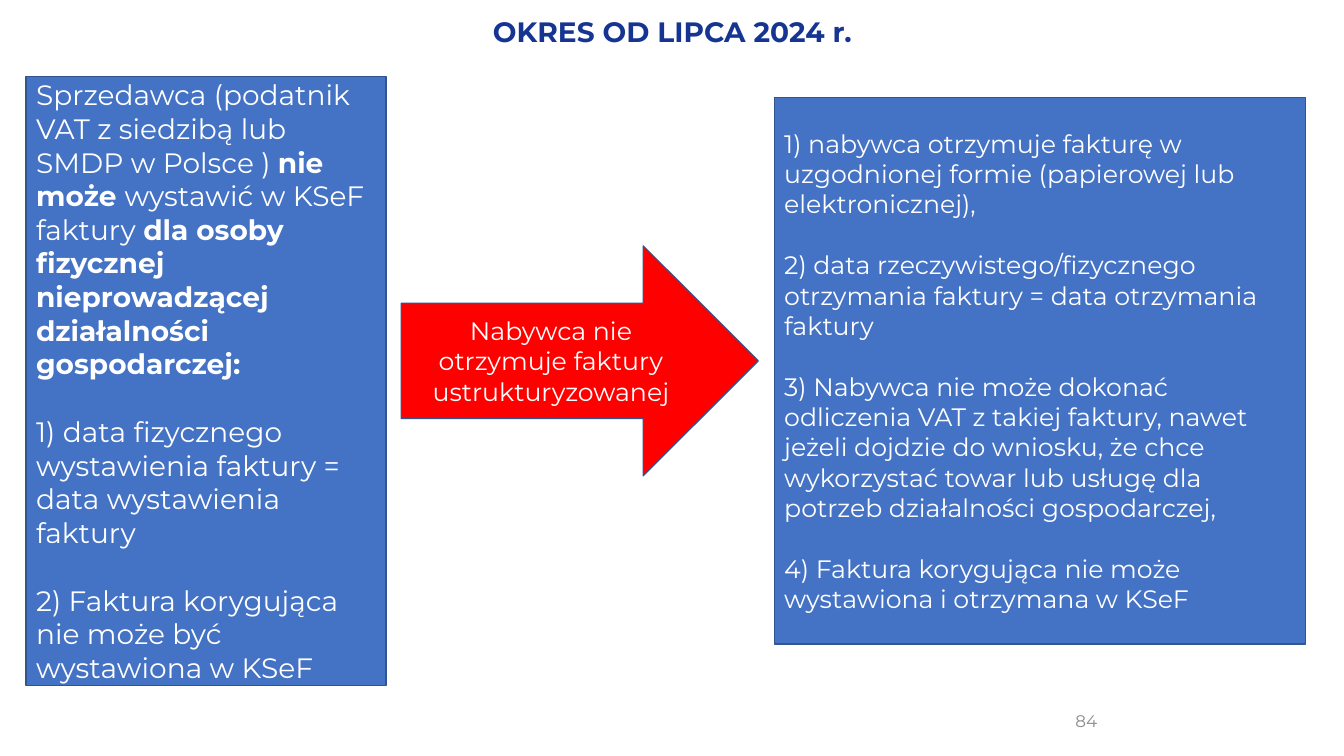
from dataclasses import dataclass

import pptx
import pptx.dml.color
import pptx.enum.shapes
import pptx.enum.text
import pptx.util

Inches = pptx.util.Inches
Shape = pptx.enum.shapes.MSO_SHAPE
Align = pptx.enum.text.PP_ALIGN
Anchor = pptx.enum.text.MSO_ANCHOR

FONT = "Montserrat"
LINE_HEIGHT = 1.22  # of the text size; one empty line between paragraphs
COLOURS = {
    "box": "4472C4",
    "arrow": "FF0000",
    "outline": "325491",
    "light": "FFFFFF",
    "title": "163593",
    "number": "8C8C8C",
}


@dataclass(frozen=True)
class Run:
    text: str
    bold: bool = False


@dataclass(frozen=True)
class Style:
    size: int
    colour: str
    align: Align = Align.LEFT


@dataclass(frozen=True)
class Block:
    kind: Shape
    place: tuple[float, float, float, float]
    fill: str
    style: Style
    paragraphs: list[list[Run]]


SELLER = Block(
    Shape.RECTANGLE, (0.26, 0.76, 3.57, 6.04), "box", Style(20, "light"),
    [
        [
            Run("Sprzedawca (podatnik VAT z siedzibą lub SMDP w Polsce ) "),
            Run("nie może ", bold=True),
            Run("wystawić w KSeF faktury "),
            Run("dla osoby fizycznej nieprowadzącej działalności gospodarczej:", bold=True),
        ],
        [Run("1) data fizycznego wystawienia faktury = data wystawienia faktury")],
        [Run("2) Faktura korygująca nie może być wystawiona w KSeF")],
    ],
)
ARROW = Block(
    Shape.RIGHT_ARROW, (3.98, 2.44, 3.54, 2.28), "arrow", Style(18, "light", Align.CENTER),
    [[Run("Nabywca nie otrzymuje faktury ustrukturyzowanej")]],
)
BUYER = Block(
    Shape.RECTANGLE, (7.68, 0.97, 5.27, 5.42), "box", Style(18, "light"),
    [
        [Run("1) nabywca otrzymuje fakturę w uzgodnionej formie (papierowej lub elektronicznej),")],
        [Run("2) data rzeczywistego/fizycznego otrzymania faktury = data otrzymania faktury")],
        [Run("3) Nabywca nie może dokonać odliczenia VAT z takiej faktury, nawet jeżeli "
             "dojdzie do wniosku, że chce wykorzystać towar lub usługę dla potrzeb "
             "działalności gospodarczej,")],
        [Run("4) Faktura korygująca nie może wystawiona i otrzymana w KSeF")],
    ],
)


def colour(name: str) -> pptx.dml.color.RGBColor:
    return pptx.dml.color.RGBColor.from_string(COLOURS[name])


def write(frame, paragraphs: list[list[Run]], style: Style, wrap: bool = True) -> None:
    """Fill a text frame with paragraphs, run by run."""
    frame.word_wrap = wrap
    frame.auto_size = pptx.enum.text.MSO_AUTO_SIZE.NONE
    frame.vertical_anchor = Anchor.MIDDLE
    for index, runs in enumerate(paragraphs):
        para = frame.add_paragraph() if index else frame.paragraphs[0]
        para.alignment = style.align
        para.space_before = pptx.util.Pt(style.size * LINE_HEIGHT if index else 0)
        for run in runs:
            span = para.add_run()
            span.text = run.text
            span.font.name = FONT
            span.font.size = pptx.util.Pt(style.size)
            span.font.bold = run.bold
            span.font.color.rgb = colour(style.colour)


def draw_block(page, block: Block) -> None:
    """Draw a filled, outlined shape with its text."""
    box = page.shapes.add_shape(block.kind, *map(Inches, block.place))
    box.shadow.inherit = False
    box.fill.solid()
    box.fill.fore_color.rgb = colour(block.fill)
    box.line.color.rgb = colour("outline")
    box.line.width = pptx.util.Pt(1)
    write(box.text_frame, block.paragraphs, block.style)


def main() -> None:
    deck = pptx.Presentation()
    deck.slide_width, deck.slide_height = Inches(13.33), Inches(7.5)
    page = deck.slides.add_slide(deck.slide_layouts.get_by_name("Title Only"))

    # Title
    title = page.shapes.title
    title.left, title.top, title.width, title.height = map(Inches, (4.77, 0.09, 3.8, 0.44))
    write(title.text_frame, [[Run("OKRES OD LIPCA 2024 r.", bold=True)]],
          Style(20, "title", Align.CENTER), wrap=False)

    # Seller, arrow and buyer
    for block in (SELLER, ARROW, BUYER):
        draw_block(page, block)

    # Page number
    number = page.shapes.add_textbox(*map(Inches, (8.73, 6.95, 2.25, 0.4)))
    write(number.text_frame, [[Run("84")]], Style(12, "number", Align.RIGHT))

    deck.save("out.pptx")


if __name__ == "__main__":
    main()
